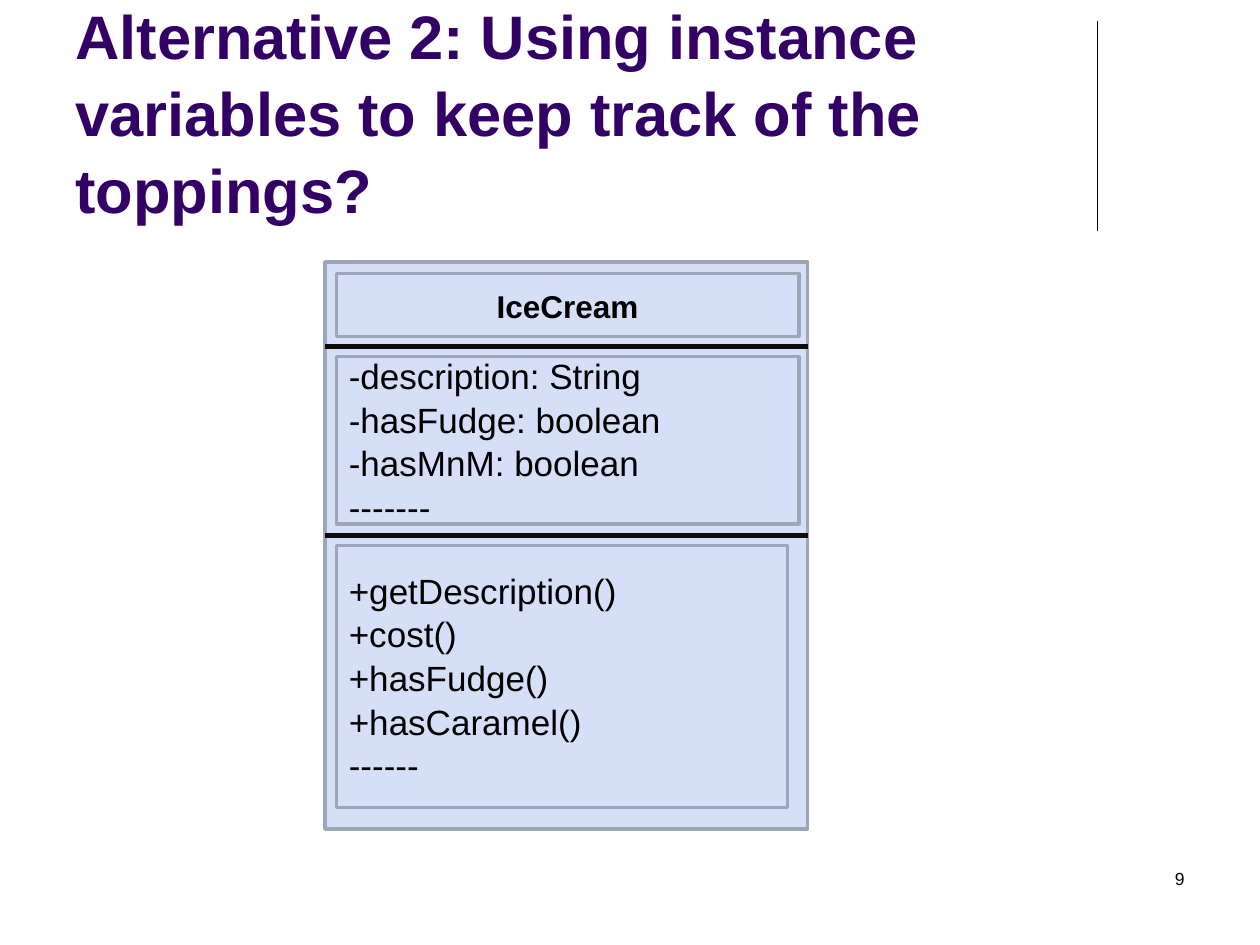
from dataclasses import dataclass

from pptx import Presentation
from pptx.dml.color import RGBColor
from pptx.enum.shapes import MSO_CONNECTOR, MSO_SHAPE
from pptx.enum.text import MSO_ANCHOR, MSO_AUTO_SIZE, PP_ALIGN
from pptx.oxml.ns import qn
from pptx.util import Inches, Pt
from lxml import etree

LEFT, CENTER, RIGHT = PP_ALIGN.LEFT, PP_ALIGN.CENTER, PP_ALIGN.RIGHT
MIDDLE, BOTTOM = MSO_ANCHOR.MIDDLE, MSO_ANCHOR.BOTTOM
RECTANGLE = MSO_SHAPE.RECTANGLE
STRAIGHT = MSO_CONNECTOR.STRAIGHT


@dataclass(frozen=True)
class Theme:
    font: str = "Arial"
    title: RGBColor = RGBColor(0x33, 0x00, 0x66)
    text: RGBColor = RGBColor(0x00, 0x00, 0x00)
    fill: RGBColor = RGBColor(0xD5, 0xDF, 0xF7)
    border: RGBColor = RGBColor(0x9E, 0xA5, 0xB7)
    divider: RGBColor = RGBColor(0x0D, 0x0D, 0x0D)
    title_size: float = 35.1
    name_size: float = 18
    member_size: float = 20
    number_size: float = 10
    line_spacing: float = 1.04


@dataclass(frozen=True)
class Box:
    left: float
    top: float
    width: float
    height: float

    def lengths(self) -> tuple:
        return tuple(map(Inches, (self.left, self.top, self.width, self.height)))


@dataclass(frozen=True)
class Compartment:
    box: Box
    lines: tuple[str, ...]
    size: float
    align: PP_ALIGN = LEFT
    bold: bool = False


THEME = Theme()
CLASS_BOX = Box(2.58, 2.08, 3.83, 4.5)
COMPARTMENTS = (
    Compartment(Box(2.67, 2.17, 3.67, 0.5), ("IceCream",),
                THEME.name_size, CENTER, True),
    Compartment(Box(2.67, 2.83, 3.67, 1.33),
                ("-description: String", "-hasFudge: boolean",
                 "-hasMnM: boolean", "-------"), THEME.member_size),
    Compartment(Box(2.67, 4.33, 3.58, 2.08),
                ("+getDescription()", "+cost()", "+hasFudge()",
                 "+hasCaramel()", "------"), THEME.member_size),
)
DIVIDER_TOPS = (2.75, 4.25)


def write(tf, lines: tuple[str, ...], size: float, color: RGBColor,
          align: PP_ALIGN = LEFT, bold: bool = False) -> None:
    tf.word_wrap = True
    tf.auto_size = MSO_AUTO_SIZE.NONE
    tf.text = "\n".join(lines)
    for p in tf.paragraphs:
        p.alignment = align
        p.line_spacing = THEME.line_spacing
        p.space_before = Pt(0)
        for r in p.runs:
            r.font.name = THEME.font
            r.font.size = Pt(size)
            r.font.bold = bold
            r.font.color.rgb = color


def add_box(s, box: Box):
    sp = s.shapes.add_shape(RECTANGLE, *box.lengths())
    sp.shadow.inherit = False
    sp.fill.solid()
    sp.fill.fore_color.rgb = THEME.fill
    sp.line.color.rgb = THEME.border
    sp.line.width = Pt(2)
    return sp


def add_compartment(s, part: Compartment) -> None:
    tf = add_box(s, part.box).text_frame
    tf.vertical_anchor = MIDDLE
    write(tf, part.lines, part.size, THEME.text, part.align, part.bold)


def add_line(s, x1: float, y1: float, x2: float, y2: float,
             color: RGBColor, width: float) -> None:
    line = s.shapes.add_connector(STRAIGHT, *map(Inches, (x1, y1, x2, y2)))
    line.line.color.rgb = color
    line.line.width = Pt(width)
    etree.SubElement(line._element.spPr, qn("a:effectLst"))


def add_title(s, text: str, box: Box) -> None:
    title = s.shapes.title
    title.left, title.top, title.width, title.height = box.lengths()
    title.text_frame.vertical_anchor = BOTTOM
    write(title.text_frame, (text,), THEME.title_size, THEME.title, bold=True)


def main() -> None:
    prs = Presentation()
    prs.slide_width, prs.slide_height = Inches(10), Inches(7.5)
    s = prs.slides.add_slide(prs.slide_layouts[5])

    add_line(s, 8.71, 0.17, 8.71, 1.83, THEME.text, 0.75)
    add_title(s, "Alternative 2: Using instance variables to keep track "
                 "of the toppings?", Box(0.5, 0.42, 8.25, 1.42))
    number = s.shapes.add_textbox(*Box(7.17, 6.83, 2.33, 0.5).lengths())
    write(number.text_frame, ("9",), THEME.number_size, THEME.text, RIGHT)

    add_box(s, CLASS_BOX)
    for part in COMPARTMENTS:
        add_compartment(s, part)
    for top in DIVIDER_TOPS:
        add_line(s, CLASS_BOX.left, top, CLASS_BOX.left + CLASS_BOX.width, top,
                 THEME.divider, 3)

    prs.save("out.pptx")


if __name__ == "__main__":
    main()
